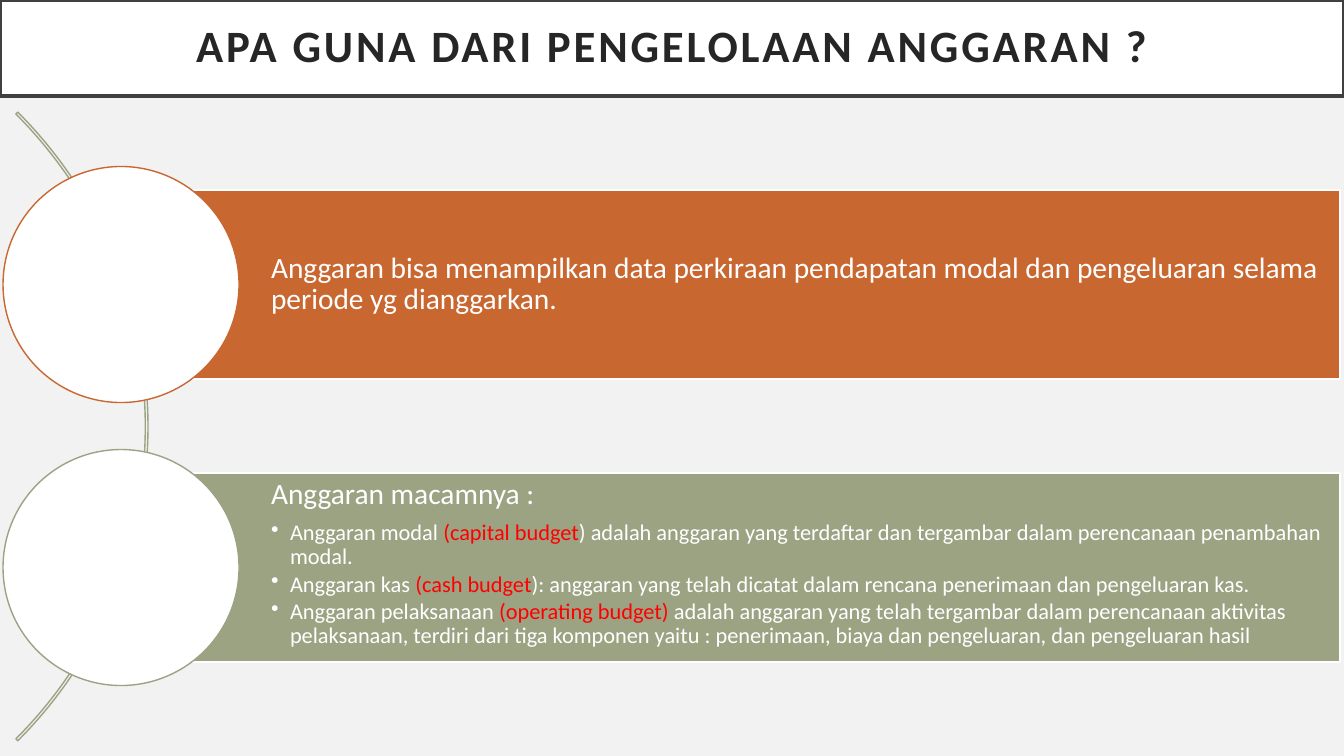
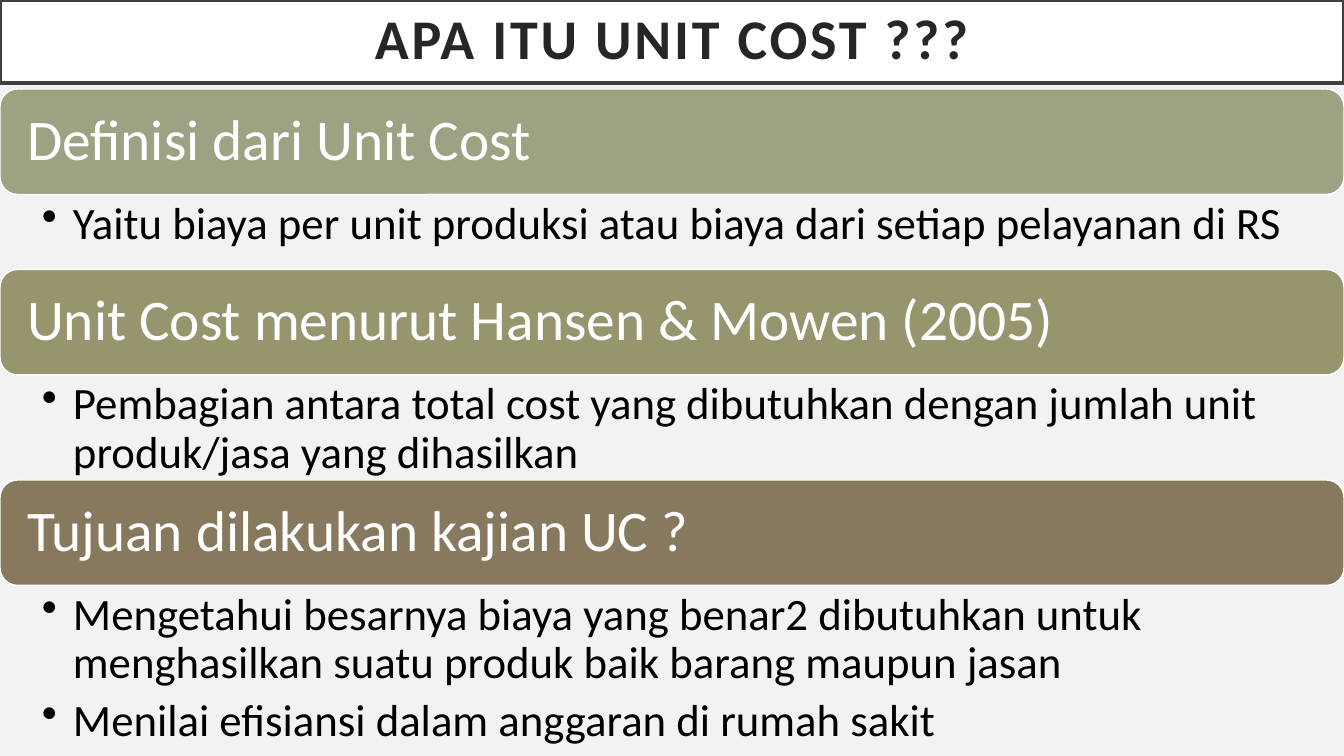
from lxml import etree
from pptx import Presentation
from pptx.dml.color import RGBColor
from pptx.enum.shapes import MSO_SHAPE
from pptx.enum.text import MSO_ANCHOR, MSO_AUTO_SIZE, PP_ALIGN
from pptx.oxml.ns import qn
from pptx.util import Emu, Pt

RECT, ROUND = MSO_SHAPE.RECTANGLE, MSO_SHAPE.ROUNDED_RECTANGLE
OVAL, ARC = MSO_SHAPE.OVAL, MSO_SHAPE.BLOCK_ARC
TOP, MID = MSO_ANCHOR.TOP, MSO_ANCHOR.MIDDLE
LEFT, CENTER = PP_ALIGN.LEFT, PP_ALIGN.CENTER

PAPER = RGBColor(0xF2, 0xF2, 0xF2)
WHITE = RGBColor(0xFF, 0xFF, 0xFF)
BLACK = RGBColor(0x00, 0x00, 0x00)
INK = RGBColor(0x26, 0x26, 0x26)
FRAME = RGBColor(0x40, 0x40, 0x40)
RED = RGBColor(0xFF, 0x00, 0x00)
ORANGE = RGBColor(0xC9, 0x67, 0x31)
SAGE = RGBColor(0x9C, 0xA3, 0x83)
OLIVE = RGBColor(0x97, 0x95, 0x6E)
BROWN = RGBColor(0x87, 0x79, 0x5D)

FONT = "Calibri"
WIDE, HIGH = 1344, 756
UNIT = 12192000 / WIDE

# Each use: colour, anchor, heading, bullets; a bullet is plain, red, plain.
USES = [
    (ORANGE, MID, "Anggaran bisa menampilkan data perkiraan pendapatan modal "
     "dan pengeluaran selama periode yg dianggarkan.", []),
    (SAGE, TOP, "Anggaran macamnya :", [
        ("Anggaran modal ", "(capital budget",
         ") adalah anggaran yang terdaftar dan tergambar dalam perencanaan "
         "penambahan modal."),
        ("Anggaran kas ", "(cash budget",
         "): anggaran yang telah dicatat dalam rencana penerimaan dan "
         "pengeluaran kas."),
        ("Anggaran pelaksanaan ", "(operating budget) ",
         "adalah anggaran yang telah tergambar dalam perencanaan aktivitas "
         "pelaksanaan, terdiri dari tiga komponen yaitu : penerimaan, biaya "
         "dan pengeluaran, dan pengeluaran hasil"),
    ]),
]

# Each topic: colour, heading, height of its list, bullets.
TOPICS = [
    (SAGE, "Definisi dari Unit Cost", 75,
     ["Yaitu biaya per unit produksi atau biaya dari setiap pelayanan di RS"]),
    (OLIVE, "Unit Cost menurut Hansen & Mowen (2005)", 105,
     ["Pembagian antara total cost yang dibutuhkan dengan jumlah unit "
      "produk/jasa yang dihasilkan"]),
    (BROWN, "Tujuan dilakukan kajian UC ?", 163,
     ["Mengetahui besarnya biaya yang benar2 dibutuhkan untuk menghasilkan "
      "suatu produk baik barang maupun jasan",
      "Menilai efisiansi dalam anggaran di rumah sakit"]),
]


def px(num):
    return Emu(round(num * UNIT))


def paint(shape, fill, line, width=1):
    if fill is None:
        shape.fill.background()
    else:
        shape.fill.solid()
        shape.fill.fore_color.rgb = fill
    shape.line.color.rgb = line
    shape.line.width = Pt(width)


def draw(slide, kind, box, fill, line):
    shape = slide.shapes.add_shape(kind, *map(px, box))
    shape.shadow.inherit = False
    paint(shape, fill, line)
    return shape


def set_frame(shape, pads, anchor):
    """Prepare a text frame; pads are left, top, right, bottom."""
    frame = shape.text_frame
    frame.word_wrap = True
    frame.auto_size = MSO_AUTO_SIZE.NONE
    frame.vertical_anchor = anchor
    (frame.margin_left, frame.margin_top,
     frame.margin_right, frame.margin_bottom) = map(px, pads)
    return frame


def write(frame, *parts, size, color, mark=RED, bold=False, align=LEFT,
          gap=0, hang=0, track=0):
    """Add a paragraph; every second part takes the mark colour.

    gap is a share of the size, hang the bullet indent in px.
    """
    para = frame.paragraphs[-1]
    if para.runs:
        para = frame.add_paragraph()
    para.alignment = align
    para.line_spacing = 0.9
    para.space_before = Pt(0)
    para.space_after = Pt(size * gap)
    if hang:
        props = para._p.get_or_add_pPr()
        props.set("marL", str(px(hang)))
        props.set("indent", str(-px(hang)))
        etree.SubElement(props, qn("a:buChar")).set("char", "•")
    for num, part in enumerate(parts):
        run = para.add_run()
        run.text = part
        font = run.font
        font.name, font.size, font.bold = FONT, Pt(size), bold
        font.color.rgb = mark if num % 2 else color
        if track:
            run._r.get_or_add_rPr().set("spc", str(track * 100))


def add_page(deck, text, height, size):
    """Add a slide with the framed title band."""
    slide = deck.slides.add_slide(deck.slide_layouts[5])
    title = slide.shapes.title
    title.left, title.top = px(0), px(0)
    title.width, title.height = px(WIDE), px(height)
    paint(title, WHITE, FRAME, 2.5)
    frame = set_frame(title, (20, 20, 20, 20), MID)
    write(frame, text, size=size, color=INK, bold=True, align=CENTER, track=2)
    return slide


def add_uses(deck):
    slide = add_page(deck, "APA GUNA DARI PENGELOLAAN ANGGARAN ?", 96, 32)
    arc = draw(slide, ARC, (-741, -18, 889, 889), None, SAGE)
    for num, value in enumerate((189, 27, 0.003)):
        arc.adjustments[num] = value
    left, top, height, step, disc = 121, 190, 189, 283, 236
    for num, (color, anchor, head, items) in enumerate(USES):
        y = top + num * step
        bar = draw(slide, RECT, (left, y, 1219, height), color, WHITE)
        frame = set_frame(bar, (150, 6, 6, 6), anchor)
        write(frame, head, size=21, color=WHITE, gap=0.35)
        for item in items:
            write(frame, *item, size=16, color=WHITE, gap=0.15, hang=19)
        box = (left - disc / 2, y + (height - disc) / 2, disc, disc)
        draw(slide, OVAL, box, WHITE, color)


def add_topics(deck):
    slide = add_page(deck, "APA ITU UNIT COST ???", 83, 40)
    y, height = 89, 105.5
    for color, head, room, items in TOPICS:
        bar = draw(slide, ROUND, (0, y, WIDE, height), color, WHITE)
        frame = set_frame(bar, (22, 5, 22, 5), MID)
        write(frame, head, size=41, color=WHITE, gap=0.35)
        y += height
        area = slide.shapes.add_textbox(*map(px, (0, y, WIDE, room)))
        frame = set_frame(area, (42, 6, 32, 6), TOP)
        for item in items:
            write(frame, item, size=32, color=BLACK, gap=0.2, hang=31)
        y += room


def main():
    deck = Presentation()
    deck.slide_width, deck.slide_height = px(WIDE), px(HIGH)
    back = deck.slide_master.background.fill
    back.solid()
    back.fore_color.rgb = PAPER
    add_uses(deck)
    add_topics(deck)
    deck.save("out.pptx")


if __name__ == "__main__":
    main()
